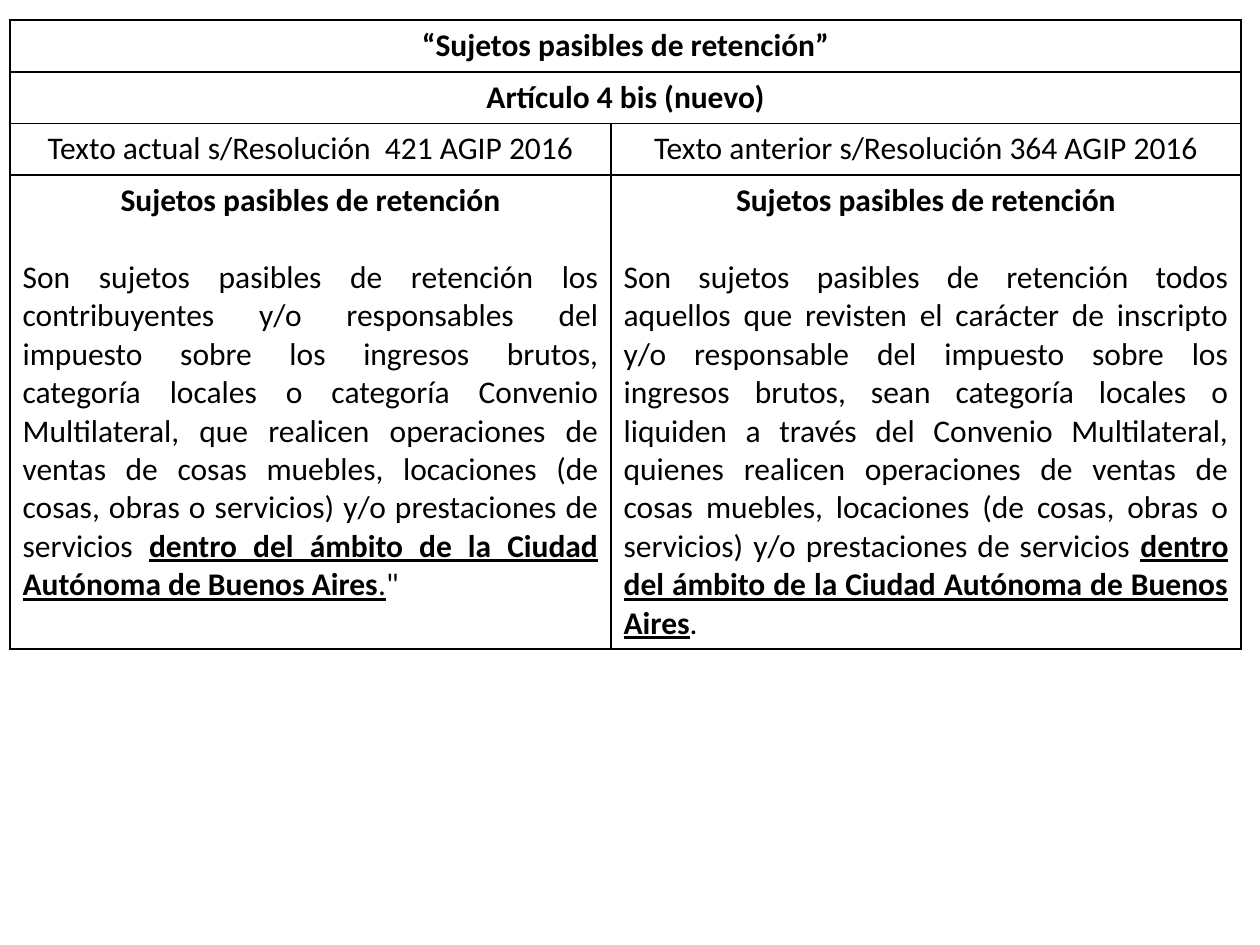
from lxml import etree
from pptx import Presentation
from pptx.dml.color import RGBColor
from pptx.enum.text import PP_ALIGN
from pptx.oxml.ns import qn
from pptx.util import Inches, Pt

CENTER = PP_ALIGN.CENTER
JUSTIFY = PP_ALIGN.JUSTIFY
BLACK = "000000"


def color(value):
    return RGBColor.from_string(value)


def format_paragraph(paragraph, alignment):
    paragraph.alignment = alignment
    paragraph.font.name = "Calibri"
    paragraph.font.size = Pt(18)
    paragraph.font.color.rgb = color(BLACK)


presentation = Presentation()
presentation.slide_width = Inches(10)
presentation.slide_height = Inches(7.5)
slide = presentation.slides.add_slide(presentation.slide_layouts[6])

column_widths = [4.77, 5]
row_heights = [0.41, 0.41, 0.41, 3.75]
table = slide.shapes.add_table(
    len(row_heights), len(column_widths), Inches(0.08), Inches(0.16),
    Inches(sum(column_widths)), Inches(sum(row_heights)),
).table
table.first_row = False
table.horz_banding = False
for column, width in zip(table.columns, column_widths):
    column.width = Inches(width)
for row, height in zip(table.rows, row_heights):
    row.height = Inches(height)

for cell in table.iter_cells():
    properties = cell._tc.get_or_add_tcPr()
    for side in ("a:lnL", "a:lnR", "a:lnT", "a:lnB"):
        border = etree.SubElement(properties, qn(side), w=str(Pt(1)))
        fill = etree.SubElement(border, qn("a:solidFill"))
        etree.SubElement(fill, qn("a:srgbClr"), val=BLACK)
    cell.fill.background()

for row_index in range(2):
    table.cell(row_index, 0).merge(table.cell(row_index, 1))

headings = [
    (0, 0, "“Sujetos pasibles de retención”", True),
    (1, 0, "Artículo 4 bis (nuevo)", True),
    (2, 0, "Texto actual s/Resolución  421 AGIP 2016", False),
    (2, 1, "Texto anterior s/Resolución 364 AGIP 2016", False),
    (3, 0, "Sujetos pasibles de retención", True),
    (3, 1, "Sujetos pasibles de retención", True),
]
for row_index, column_index, text, bold in headings:
    paragraph = table.cell(row_index, column_index).text_frame.paragraphs[0]
    paragraph.text = text
    format_paragraph(paragraph, CENTER)
    paragraph.font.bold = bold

scope = "dentro del ámbito de la Ciudad Autónoma de Buenos Aires"
articles = [
    [
        ("Son sujetos pasibles de retención los contribuyentes y/o responsables "
         "del impuesto sobre los ingresos brutos, categoría locales o categoría "
         "Convenio Multilateral, que realicen operaciones de ventas de cosas "
         "muebles, locaciones (de cosas, obras o servicios) y/o prestaciones de "
         "servicios ", False, False),
        (scope, True, True),
        (".", False, True),
        ('"', False, False),
    ],
    [
        ("Son sujetos pasibles de retención todos aquellos que revisten el "
         "carácter de inscripto y/o responsable del impuesto sobre los ingresos "
         "brutos, sean categoría locales o liquiden a través del Convenio "
         "Multilateral, quienes realicen operaciones de ventas de cosas muebles, "
         "locaciones (de cosas, obras o servicios) y/o prestaciones de "
         "servicios ", False, False),
        (scope, True, True),
        (".", False, False),
    ],
]
for column_index, article in enumerate(articles):
    paragraph = table.cell(3, column_index).text_frame.add_paragraph()
    paragraph.space_before = Pt(22)
    format_paragraph(paragraph, JUSTIFY)
    for text, bold, underline in article:
        run = paragraph.add_run()
        run.text = text
        run.font.bold = bold
        run.font.underline = underline

presentation.save("out.pptx")
